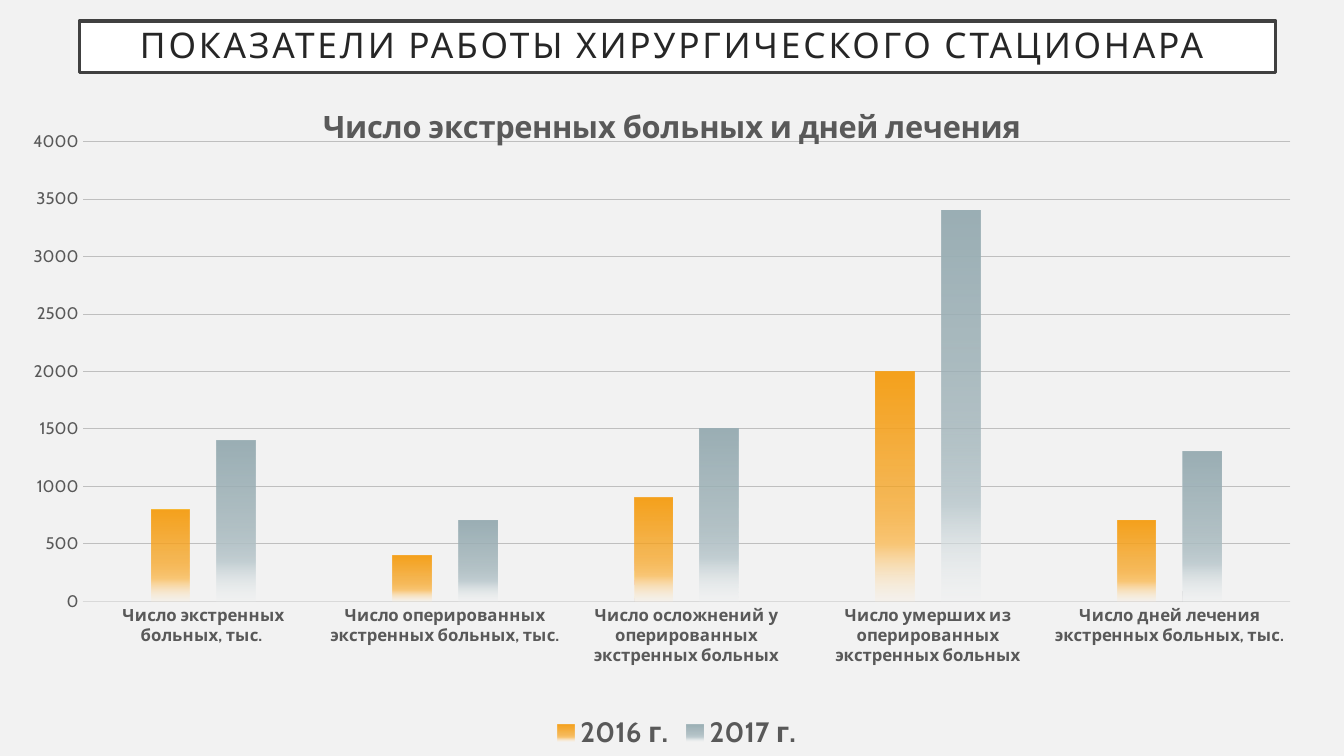
"""Build a slide comparing surgical ward indicators for 2016 and 2017."""
from dataclasses import dataclass

import lxml.etree
import pptx
import pptx.chart.data
import pptx.dml.color
import pptx.enum.chart
import pptx.enum.text
import pptx.oxml
import pptx.oxml.ns
import pptx.util
from pptx.util import Cm

FONT = "Cabin"
COLORS = {
    "background": "F2F2F2",
    "heading_fill": "FFFFFF",
    "heading_border": "404040",
    "heading_text": "262626",
    "chart_text": "595959",
    "grid": "BFBFBF",
    "axis": "D9D9D9",
    "orange": "F6A21D",
    "orange_mid": "FAC777",
    "orange_pale": "FDECD2",
    "slate": "9BAFB5",
    "slate_mid": "C3CFD3",
    "slate_pale": "EBEFF0",
}
INDICATORS = [
    "Число экстренных больных, тыс. ",
    "Число оперированных экстренных больных, тыс.",
    "Число осложнений у оперированных экстренных больных",
    "Число умерших из оперированных экстренных больных",
    "Число дней лечения экстренных больных, тыс.",
]


@dataclass(frozen=True)
class Year:
    """One year of indicators and the base name of its colours."""

    label: str
    values: tuple[int, ...]
    color: str


YEARS = [
    Year("2016 г.", (800, 400, 900, 2000, 700), "orange"),
    Year("2017 г.", (1400, 700, 1500, 3400, 1300), "slate"),
]


def rgb(name: str) -> pptx.dml.color.RGBColor:
    """Return the named colour."""
    return pptx.dml.color.RGBColor.from_string(COLORS[name])


def style_font(font, *, size: float, color: str = "chart_text", bold: bool = False) -> None:
    """Format a font."""
    font.name, font.size, font.bold = FONT, pptx.util.Pt(size), bold
    font.color.rgb = rgb(color)


def write_text(frame, text: str, *, spacing: float = 0, **font_format) -> None:
    """Put centred text into a frame and format it."""
    paragraph = frame.paragraphs[0]
    paragraph.alignment = pptx.enum.text.PP_ALIGN.CENTER
    run = paragraph.add_run()
    run.text = text
    style_font(run.font, **font_format)
    if spacing:
        run.font._element.set("spc", str(int(spacing * 100)))


def style_line(line, color: str, width: float) -> None:
    """Format a line."""
    line.color.rgb, line.width = rgb(color), pptx.util.Pt(width)


def fade_fill(series, color: str) -> None:
    """Fill the bars with a gradient that fades downwards."""
    stops = [(0, "", 100), (51, "", 75), (75, "_mid", 100), (100, "_pale", 15)]
    stops_xml = "".join(
        f'<a:gs pos="{position * 1000}"><a:srgbClr val="{COLORS[color + shade]}">'
        f'<a:alpha val="{opacity * 1000}"/></a:srgbClr></a:gs>'
        for position, shade, opacity in stops
    )
    gradient = pptx.oxml.parse_xml(
        f'<a:gradFill {pptx.oxml.ns.nsdecls("a")} rotWithShape="1">'
        f'<a:gsLst>{stops_xml}</a:gsLst><a:lin ang="5400000" scaled="0"/></a:gradFill>'
    )
    series.format.line.fill.background()
    series.format._element.get_or_add_spPr().insert(0, gradient) if hasattr(
        series.format._element, "get_or_add_spPr"
    ) else series._element.get_or_add_spPr().insert(0, gradient)


def place(owner, **settings) -> None:
    """Give a chart part a manual layout measured in fractions of the chart."""
    layout = owner.find(pptx.oxml.ns.qn("c:layout"))
    if layout is None:
        layout = pptx.oxml.parse_xml(f'<c:layout {pptx.oxml.ns.nsdecls("c")}/>')
        text = owner.find(pptx.oxml.ns.qn("c:tx"))
        owner.insert(0 if text is None else owner.index(text) + 1, layout)
    for child in list(layout):
        layout.remove(child)
    manual = lxml.etree.SubElement(layout, pptx.oxml.ns.qn("c:manualLayout"))
    for tag, value in settings.items():
        lxml.etree.SubElement(manual, pptx.oxml.ns.qn(f"c:{tag}")).set("val", str(value))


def add_heading(slide) -> None:
    """Format the title placeholder as a framed heading."""
    heading = slide.shapes.title
    heading.left, heading.top, heading.width, heading.height = Cm(2), Cm(0.53), Cm(30.15), Cm(1.3)
    heading.fill.solid()
    heading.fill.fore_color.rgb = rgb("heading_fill")
    style_line(heading.line, "heading_border", 2.5)
    frame = heading.text_frame
    frame.auto_size = pptx.enum.text.MSO_AUTO_SIZE.NONE
    frame.word_wrap = True
    frame.vertical_anchor = pptx.enum.text.MSO_ANCHOR.MIDDLE
    frame.margin_left = frame.margin_right = frame.margin_top = frame.margin_bottom = Cm(0.5)
    frame.paragraphs[0].line_spacing = 0.9
    write_text(frame, "ПОКАЗАТЕЛИ РАБОТЫ ХИРУРГИЧЕСКОГО СТАЦИОНАРА ",
               size=25.2, color="heading_text", spacing=2)


def add_indicator_chart(slide) -> None:
    """Add the clustered columns for both years."""
    indicators = pptx.chart.data.CategoryChartData()
    indicators.categories = INDICATORS
    for year in YEARS:
        indicators.add_series(year.label, year.values)
    chart = slide.shapes.add_chart(
        pptx.enum.chart.XL_CHART_TYPE.COLUMN_CLUSTERED,
        Cm(0.84), Cm(1.83), Cm(32.39), Cm(17.22), indicators,
    ).chart
    style_font(chart.font, size=10)

    chart.has_title = True
    write_text(chart.chart_title.text_frame, "Число экстренных больных и дней лечения",
               size=22, bold=True)
    place(chart.chart_title._element, xMode="edge", yMode="edge", x=0.22, y=0.04)
    place(chart._chartSpace.chart.plotArea, layoutTarget="inner", xMode="edge", yMode="edge",
          x=0.037, y=0.101, w=0.941, h=0.673)

    columns = chart.plots[0]
    columns.gap_width, columns.overlap, columns.vary_by_categories = 355, -70, False
    for series, year in zip(columns.series, YEARS):
        fade_fill(series, year.color)

    for axis, bold in ((chart.category_axis, True), (chart.value_axis, False)):
        axis.major_tick_mark = axis.minor_tick_mark = pptx.enum.chart.XL_TICK_MARK.NONE
        style_font(axis.tick_labels.font, size=12, bold=bold)
    style_line(chart.category_axis.format.line, "axis", 0.75)
    scale = chart.value_axis
    scale.minimum_scale, scale.maximum_scale, scale.major_unit = 0, 4000, 500
    scale.format.line.fill.background()
    style_line(scale.major_gridlines.format.line, "grid", 0.75)

    chart.has_legend = True
    chart.legend.position = pptx.enum.chart.XL_LEGEND_POSITION.BOTTOM
    chart.legend.include_in_layout = False
    style_font(chart.legend.font, size=20, bold=True)


def main() -> None:
    """Create and save the presentation."""
    deck = pptx.Presentation()
    deck.slide_width, deck.slide_height = Cm(33.87), Cm(19.05)
    slide = deck.slides.add_slide(deck.slide_layouts[5])
    slide.background.fill.solid()
    slide.background.fill.fore_color.rgb = rgb("background")
    add_indicator_chart(slide)
    add_heading(slide)
    slide.shapes._spTree.append(slide.shapes.title._element)
    deck.save("out.pptx")


if __name__ == "__main__":
    main()
